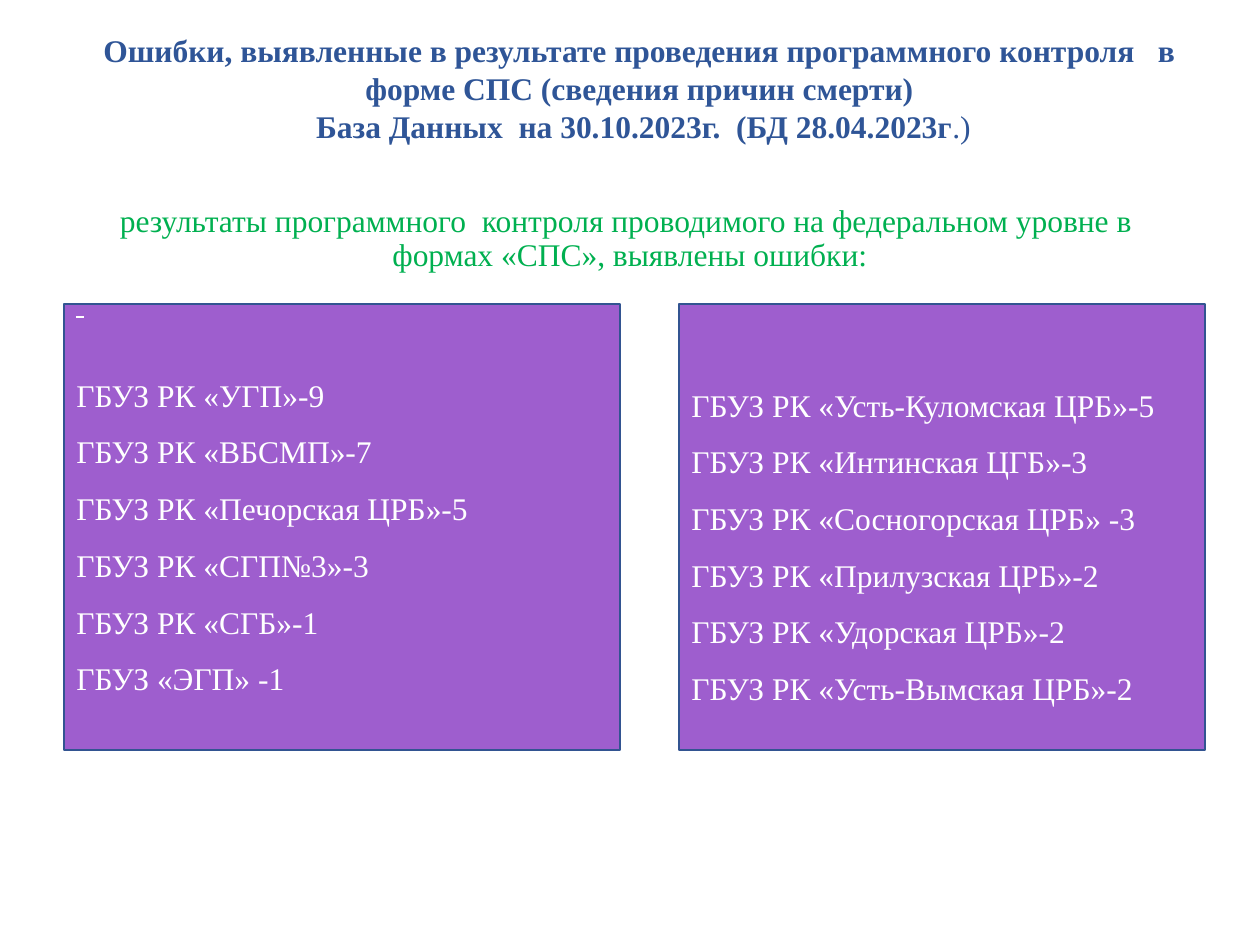
from pptx import Presentation
from pptx import util as u
from pptx.dml.color import RGBColor
from pptx.enum import shapes, text

PX = 914400 / 126
COLORS = {"title": "2F5597", "subtitle": "00B050", "panel": "9E5ECE",
          "border": "325491", "list": "FFFFFF"}
TITLE = ("Ошибки, выявленные в результате проведения программного контроля   в "
         "форме СПС (сведения причин смерти)\v База Данных  на 30.10.2023г.  (БД 28.04.2023г")
SUBTITLE = ("результаты программного  контроля проводимого на федеральном уровне в  "
            "формах «СПС», выявлены ошибки:")
LEFT_ERRORS = ["ГБУЗ РК «УГП»-9", "ГБУЗ РК «ВБСМП»-7", "ГБУЗ РК «Печорская ЦРБ»-5",
               "ГБУЗ РК «СГП№3»-3", "ГБУЗ РК «СГБ»-1", "ГБУЗ «ЭГП» -1"]
RIGHT_ERRORS = ["ГБУЗ РК «Усть-Куломская ЦРБ»-5", "ГБУЗ РК «Интинская ЦГБ»-3",
                "ГБУЗ РК «Сосногорская ЦРБ» -3", "ГБУЗ РК «Прилузская ЦРБ»-2",
                "ГБУЗ РК «Удорская ЦРБ»-2", "ГБУЗ РК «Усть-Вымская ЦРБ»-2"]


def px(*lengths):
    return [u.Emu(round(n * PX)) for n in lengths]


def rgb(name):
    return RGBColor.from_string(COLORS[name])


def set_frame(frame, anchor, top=6, bottom=6):
    frame.word_wrap = True
    frame.vertical_anchor = anchor
    frame.margin_top, frame.margin_bottom = px(top, bottom)


def add_paragraph(frame, runs, color, align=text.PP_ALIGN.LEFT, spacing=1.0, before=0):
    """Add one paragraph; runs is a list of (words, font settings)."""
    first = frame.paragraphs[0]
    paragraph = frame.add_paragraph() if first.runs else first
    paragraph.alignment = align
    paragraph.line_spacing = spacing
    paragraph.space_before = u.Pt(before)
    for words, settings in runs:
        for index, line in enumerate(words.split("\v")):
            if index:
                paragraph.add_line_break()
            run = paragraph.add_run()
            run.text = line
            run.font.name = "Times New Roman"
            run.font.size = u.Pt(18)
            run.font.color.rgb = rgb(color)
            for key, value in settings.items():
                setattr(run.font, key, value)


def add_title(slide, box):
    frame = slide.shapes.add_textbox(*px(*box)).text_frame
    set_frame(frame, text.MSO_ANCHOR.MIDDLE, top=0, bottom=37)
    add_paragraph(frame, [(TITLE, {"bold": True}), (".)", {"bold": False})], "title",
                  align=text.PP_ALIGN.CENTER)


def add_subtitle(slide, box):
    frame = slide.shapes.add_textbox(*px(*box)).text_frame
    set_frame(frame, text.MSO_ANCHOR.TOP, top=10)
    add_paragraph(frame, [(SUBTITLE, {})], "subtitle",
                  align=text.PP_ALIGN.CENTER, spacing=0.9)


def add_error_panel(slide, box, errors, bottom, underlined_lead=False):
    panel = slide.shapes.add_shape(shapes.MSO_SHAPE.RECTANGLE, *px(*box))
    panel.shadow.inherit = False
    panel.fill.solid()
    panel.fill.fore_color.rgb = rgb("panel")
    panel.line.color.rgb = rgb("border")
    panel.line.width = u.Pt(1)
    frame = panel.text_frame
    set_frame(frame, text.MSO_ANCHOR.BOTTOM, top=0, bottom=bottom)
    if underlined_lead:
        add_paragraph(frame, [(" ", {"underline": True})], "list")
    for index, error in enumerate(errors):
        gap = 21 if underlined_lead and index == 0 else 0
        add_paragraph(frame, [(error, {})], "list", spacing=1.5, before=gap)


def main():
    deck = Presentation()
    deck.slide_width, deck.slide_height = u.Inches(10), u.Inches(7.5)
    slide = deck.slides.add_slide(deck.slide_layouts[6])
    add_title(slide, (74, 37, 1131, 139))
    add_subtitle(slide, (87, 195, 1086, 656))
    add_error_panel(slide, (679, 304, 526, 446), RIGHT_ERRORS, bottom=43)
    add_error_panel(slide, (64, 304, 556, 446), LEFT_ERRORS, bottom=53, underlined_lead=True)
    deck.save("out.pptx")


if __name__ == "__main__":
    main()
